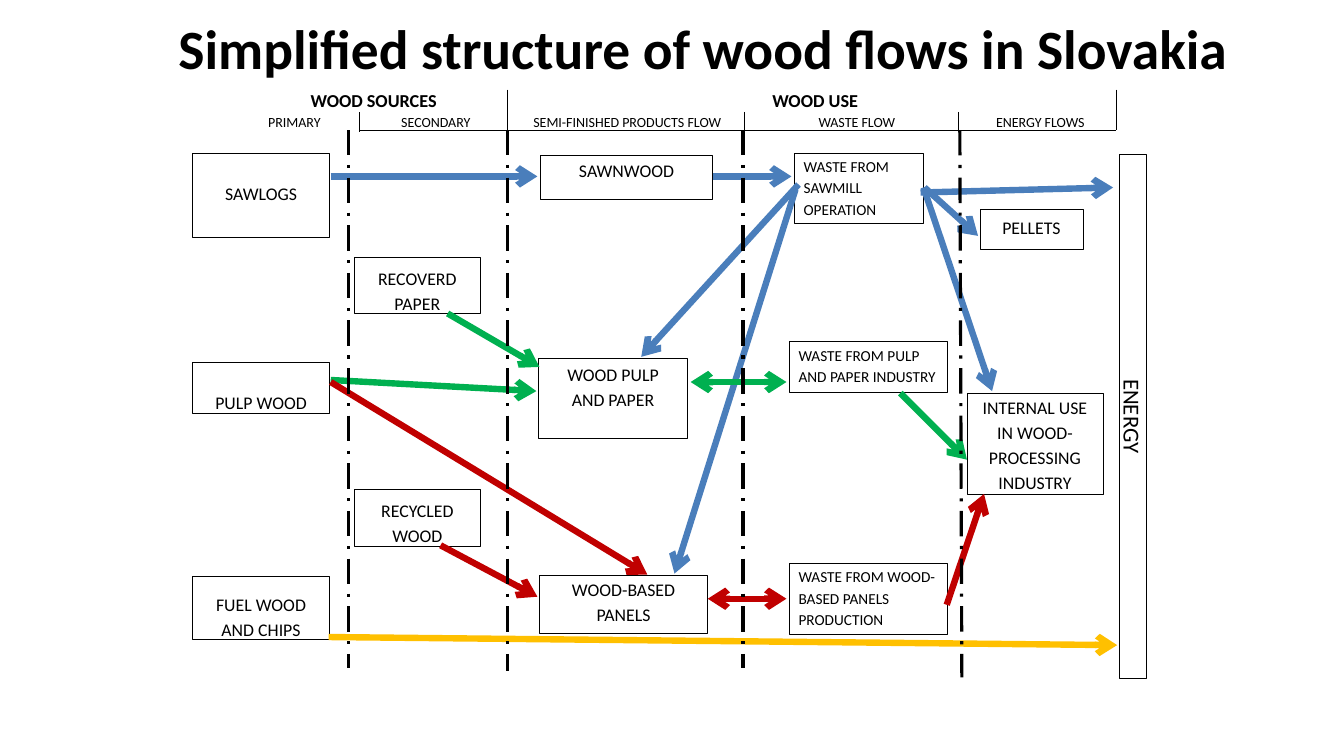
from copy import deepcopy
from lxml.etree import SubElement
from pptx import Presentation
from pptx.dml.color import RGBColor
from pptx.enum.dml import MSO_LINE
from pptx.enum.shapes import MSO_CONNECTOR, MSO_SHAPE
from pptx.enum.text import MSO_ANCHOR, MSO_AUTO_SIZE, PP_ALIGN
from pptx.oxml.ns import qn
from pptx.util import Inches, Pt

BLACK = RGBColor(0x00, 0x00, 0x00)
BLUE = RGBColor(0x4A, 0x7E, 0xBB)
GREEN = RGBColor(0x00, 0xB0, 0x50)
RED = RGBColor(0xC0, 0x00, 0x00)
YELLOW = RGBColor(0xFF, 0xC0, 0x00)
FONT = "Calibri"
THIN, DASHED, FLOW = 0.48, 2.28, 4.56

# Content
TITLE = "Simplified structure of wood flows in Slovakia"

# Header rows: (height, line pitch, size, bold, [(text, indent), ...])
HEADER_LEFT, HEADER_TOP, HEADER_BOTTOM = 2.52, 0.89, 1.29
HEADER_COLUMNS = [1.04, 1.46, 2.35, 2.16, 1.33]
HEADER_ROWS = [
    (0.22, 16.5, 13, True,
     [("WOOD SOURCES", 0.56), ("", 0), ("", 0), ("WOOD USE", 0.29), ("", 0)]),
    (0.18, 12.8, 10, False,
     [("PRIMARY", 0.14), ("SECONDARY", 0.42), ("SEMI-FINISHED PRODUCTS FLOW", 0.27),
      ("WASTE FLOW", 0.75), ("ENERGY FLOWS", 0.35)]),
]
HEADER_TICKS = [(5.03, 0.89), (7.38, 1.11), (9.5, 1.11), (11.07, 0.89)]
DIVIDERS = [(3.46, 3.46, 6.63), (5.03, 5.03, 6.66), (7.37, 7.37, 6.63), (9.52, 9.54, 6.72)]

# Column left edges and widths
PRIMARY, SECONDARY = (1.91, 1.36), (3.51, 1.26)
WASTE = (7.83, 1.57)

# Boxes: (text, column, top, height, gap above the text)
MAIN_BOXES = [
    ("SAWLOGS", PRIMARY, 1.52, 0.84, 0.29),
    ("PULP WOOD", PRIMARY, 3.59, 0.51, 0.3),
    ("FUEL WOOD\nAND CHIPS", PRIMARY, 5.72, 0.62, 0.13),
    ("RECOVERD\nPAPER", SECONDARY, 2.55, 0.56, 0.07),
    ("RECYCLED\nWOOD", SECONDARY, 4.86, 0.56, 0.06),
    ("SAWNWOOD", (5.36, 1.71), 1.54, 0.44, 0.04),
    ("WOOD PULP\nAND PAPER", (5.34, 1.48), 3.56, 0.79, 0.01),
    ("WOOD-BASED\nPANELS", (5.35, 1.67), 5.71, 0.57, 0),
    ("PELLETS", (9.72, 1.02), 2.08, 0.39, 0.07),
    ("INTERNAL USE\nIN WOOD-\nPROCESSING\nINDUSTRY", (9.59, 1.35), 3.9, 1.0, 0),
]
WASTE_BOXES = [
    ("WASTE FROM\nSAWMILL\nOPERATION", (7.88, 1.28), 1.52, 0.7, 0.01),
    ("WASTE FROM PULP\nAND PAPER INDUSTRY", WASTE, 3.39, 0.5, 0.01),
    ("WASTE FROM WOOD-\nBASED PANELS\nPRODUCTION", WASTE, 5.59, 0.7, 0.01),
]

# Arrows by colour: (start, end, double-headed)
FLOWS = [
    (BLUE, [((3.28, 1.75), (5.33, 1.75), False),
            ((7.07, 1.75), (7.85, 1.75), False),
            ((9.17, 1.86), (9.7, 2.34), False),
            ((9.16, 1.86), (9.84, 3.88), False),
            ((7.92, 1.83), (6.36, 3.54), False),
            ((7.89, 1.88), (6.69, 5.69), False),
            ((9.13, 1.91), (11.04, 1.86), False)]),
    (GREEN, [((3.28, 3.77), (5.32, 3.88), False),
             ((6.85, 3.79), (7.8, 3.79), True),
             ((8.93, 3.9), (9.59, 4.56), False),
             ((4.44, 3.11), (5.35, 3.64), False)]),
    (RED, [((3.28, 3.79), (6.42, 5.7), False),
           ((4.37, 5.41), (5.33, 5.92), False),
           ((7.02, 5.94), (7.8, 5.94), True),
           ((9.39, 6.0), (9.76, 4.9), False)]),
    (YELLOW, [((3.26, 6.32), (11.08, 6.4), False)]),
]


def write(frame, text, size=12.7, bold=False, align=PP_ALIGN.LEFT, spacing=1.0):
    """Fill a text frame with one paragraph; newlines become line breaks."""
    para = frame.paragraphs[0]
    para.alignment = align
    para.line_spacing = spacing
    if not text:
        # An empty cell keeps its row low only if its end mark is small
        SubElement(para._p, qn("a:endParaRPr"), sz=str(int(size * 100)))
        return
    para.text = text
    for span in para.runs:
        span.font.name = FONT
        span.font.size = Pt(size)
        span.font.bold = bold
        span.font.color.rgb = BLACK
    for line_break in para._p.findall(qn("a:br")):
        line_break.append(deepcopy(para.runs[0]._r.rPr))


def set_margins(target, left=0, top=0):
    target.margin_left, target.margin_top = Inches(left), Inches(top)
    target.margin_right = target.margin_bottom = 0


def add_box(page, text, column, top, height, gap, inset=0, **text_format):
    left, width = column
    box = page.shapes.add_shape(
        MSO_SHAPE.RECTANGLE, Inches(left), Inches(top), Inches(width), Inches(height))
    box.shadow.inherit = False
    box.fill.background()
    box.line.color.rgb = BLACK
    box.line.width = Pt(THIN)
    frame = box.text_frame
    frame.word_wrap = True
    frame.vertical_anchor = MSO_ANCHOR.TOP
    set_margins(frame, inset, gap)
    write(frame, text, spacing=1.17 if "\n" in text else 1.0, **text_format)
    return box


def add_line(page, start, end, color=BLACK, width=THIN, dash=None, heads=()):
    points = [Inches(value) for value in start + end]
    line = page.shapes.add_connector(MSO_CONNECTOR.STRAIGHT, *points)
    line.line.color.rgb = color
    line.line.width = Pt(width)
    if dash:
        line.line.dash_style = dash
    outline = line.line._get_or_add_ln()
    for head in heads:
        SubElement(outline, qn(head), type="arrow", w="med", len="med")
    SubElement(line._element.spPr, qn("a:effectLst"))


def add_header(page):
    graphic = page.shapes.add_table(
        len(HEADER_ROWS), len(HEADER_COLUMNS), Inches(HEADER_LEFT), Inches(HEADER_TOP),
        Inches(sum(HEADER_COLUMNS)), Inches(sum(row[0] for row in HEADER_ROWS)))
    table = graphic.table
    table.first_row = table.horz_banding = False
    table.cell(0, 0).merge(table.cell(0, 1))
    for column, width in zip(table.columns, HEADER_COLUMNS):
        column.width = Inches(width)
    for r, (height, pitch, size, bold, labels) in enumerate(HEADER_ROWS):
        table.rows[r].height = Inches(height)
        for c, (label, indent) in enumerate(labels):
            cell = table.cell(r, c)
            set_margins(cell, indent)
            write(cell.text_frame, label, size=size, bold=bold, spacing=Pt(pitch))
            cell.fill.background()
    # Border between primary and secondary sources
    for c, side in enumerate(("a:lnR", "a:lnL")):
        properties = table.cell(1, c)._tc.get_or_add_tcPr()
        border = properties.makeelement(qn(side), {"w": str(int(Pt(THIN)))})
        properties.insert(0, border)
        fill = SubElement(border, qn("a:solidFill"))
        SubElement(fill, qn("a:srgbClr"), val=str(BLACK))


def main():
    deck = Presentation()
    deck.slide_width, deck.slide_height = Inches(13.33), Inches(7.5)
    page = deck.slides.add_slide(deck.slide_layouts[5])

    # Title
    title = page.shapes.title
    title.left, title.top = Inches(1.67), Inches(0.15)
    title.width, title.height = Inches(11.09), Inches(0.73)
    title.text_frame.auto_size = MSO_AUTO_SIZE.NONE
    title.text_frame.vertical_anchor = MSO_ANCHOR.MIDDLE
    write(title.text_frame, TITLE, size=39.6, bold=True, spacing=0.9)

    # Header and its rules
    add_header(page)
    add_line(page, (3.57, HEADER_BOTTOM), (11.07, HEADER_BOTTOM))
    for x, top in HEADER_TICKS:
        add_line(page, (x, top), (x, HEADER_BOTTOM))

    # Boxes
    for box in MAIN_BOXES:
        add_box(page, *box, align=PP_ALIGN.CENTER)
    for box in WASTE_BOXES:
        add_box(page, *box, inset=0.09, size=10.9)
    energy = add_box(page, "ENERGY", (11.1, 0.27), 1.53, 5.2, 0,
                     size=16.3, align=PP_ALIGN.CENTER)
    energy.text_frame.vertical_anchor = MSO_ANCHOR.MIDDLE
    energy.text_frame._txBody.bodyPr.set("vert", "vert")

    # Flows, then the dividers over them
    for color, arrows in FLOWS:
        for start, end, double in arrows:
            heads = ("a:headEnd", "a:tailEnd") if double else ("a:tailEnd",)
            add_line(page, start, end, color, FLOW, heads=heads)
    for top_x, bottom_x, bottom in DIVIDERS:
        add_line(page, (top_x, HEADER_BOTTOM), (bottom_x, bottom),
                 width=DASHED, dash=MSO_LINE.LONG_DASH_DOT)

    deck.save("out.pptx")


if __name__ == "__main__":
    main()
